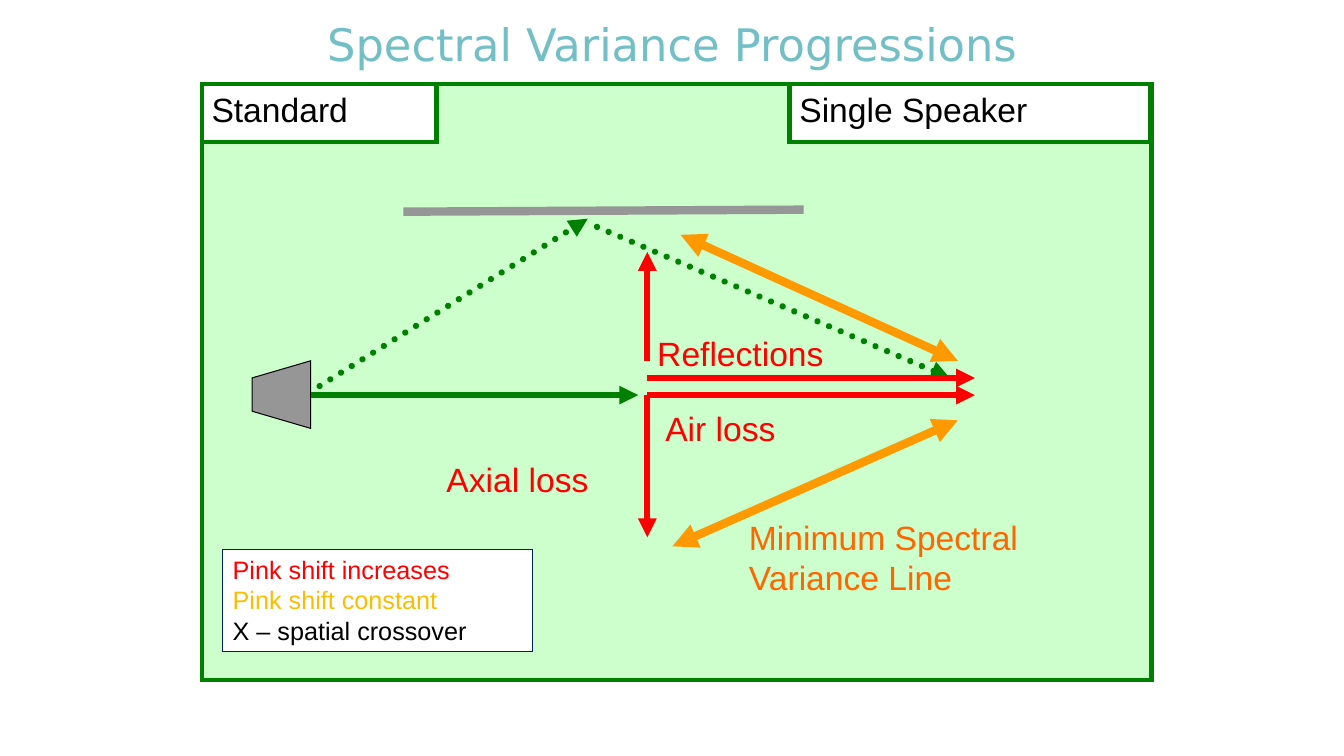
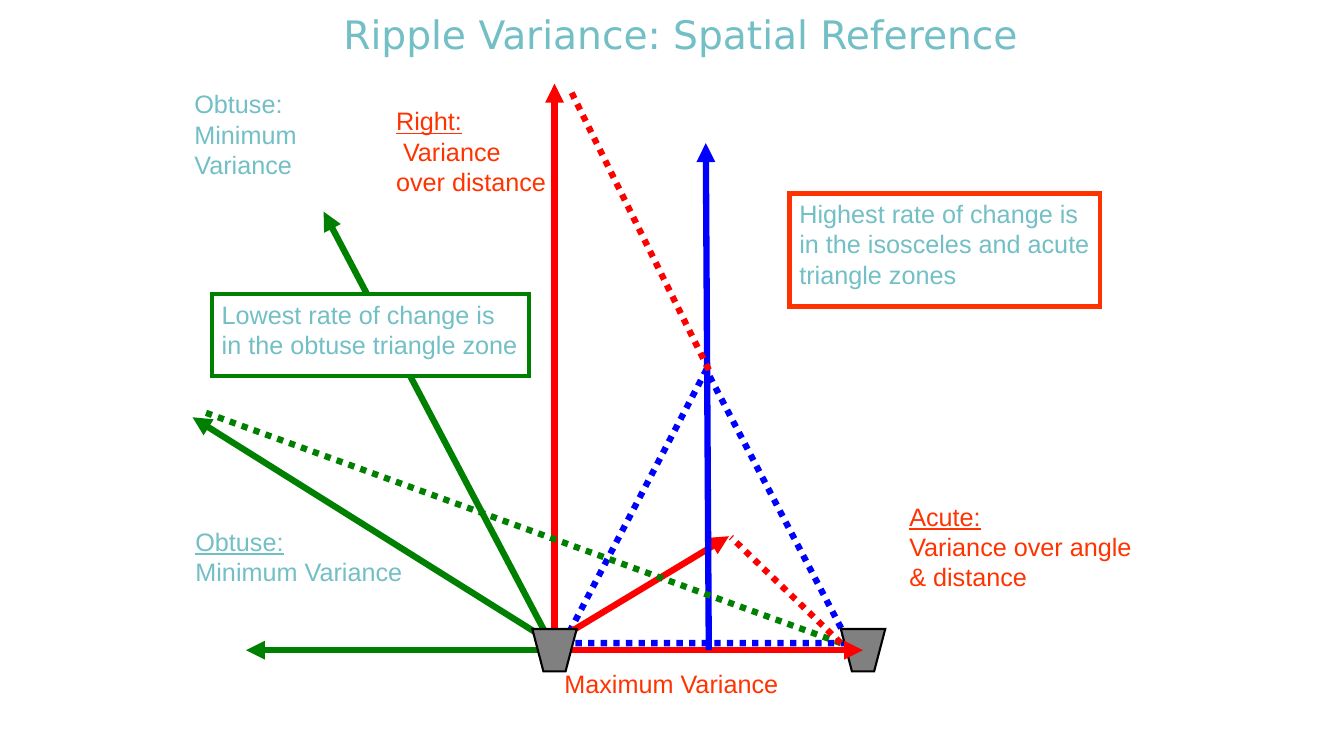
from dataclasses import dataclass
from functools import singledispatch
from typing import Any, Optional

from lxml.etree import SubElement
from pptx import Presentation
from pptx.dml.color import RGBColor as Rgb
from pptx.enum.shapes import MSO_CONNECTOR as Connector, MSO_SHAPE as Preset
from pptx.enum.text import MSO_ANCHOR as Anchor, PP_ALIGN as Align
from pptx.oxml.ns import qn
from pptx.util import Emu, Pt

PX = 9144  # EMU per px, 100 px to the inch


@dataclass(frozen=True)
class Theme:
    """Every colour, font and type size of the deck."""
    teal: str = "72BFC5"
    green: str = "008000"
    mint: str = "CCFFCC"
    red: str = "FF0000"
    vermilion: str = "FF3300"
    orange: str = "FF9900"
    deep_orange: str = "FF6600"
    amber: str = "FABE00"
    blue: str = "0000FF"
    navy: str = "002060"
    light_gray: str = "969696"
    gray: str = "808080"
    white: str = "FFFFFF"
    black: str = "000000"
    title_font: str = "DejaVu Sans"
    body_font: str = "Arial"
    label: int = 24
    note: int = 18
    frame: float = 3
    ray: float = 4.5
    bar: float = 6


T = Theme()


@dataclass(frozen=True)
class Line:
    """One paragraph of text."""
    text: str
    color: str
    underline: bool = False


@dataclass(frozen=True)
class Title:
    text: str
    left: int
    top: int
    size: int


@dataclass(frozen=True)
class Box:
    """Text, or a panel when it has a fill or a border."""
    left: int
    top: int
    width: int
    height: int
    lines: tuple[Line, ...] = ()
    size: int = T.note
    fill: Optional[str] = None
    border: Optional[str] = None
    weight: float = T.frame


@dataclass(frozen=True)
class Ray:
    """A straight line, with arrowheads at the named ends."""
    start: tuple[int, int]
    end: tuple[int, int]
    color: str
    ends: tuple[str, ...] = ("tailEnd",)
    weight: float = T.ray
    dotted: bool = False
    cap: str = "flat"


@dataclass(frozen=True)
class Speaker:
    corners: tuple[tuple[int, int], ...]
    fill: str
    weight: float


@dataclass(frozen=True)
class Triangle:
    left: int
    top: int
    width: int
    height: int
    color: str


def assign(target: Any, values: dict[str, Any]) -> None:
    for name, value in values.items():
        setattr(target, name, value)


def px(*lengths: int) -> list[Emu]:
    return [Emu(length * PX) for length in lengths]


def paint(shape: Any, color: Optional[str]) -> None:
    shape.shadow.inherit = False
    if color:
        shape.fill.solid()
        shape.fill.fore_color.rgb = Rgb.from_string(color)
    else:
        shape.fill.background()


def stroke(shape: Any, color: str, weight: float, dotted: bool = False,
           cap: str = "flat", ends: tuple[str, ...] = ()) -> None:
    shape.line.color.rgb = Rgb.from_string(color)
    shape.line.width = Pt(weight)
    ln = shape.element.spPr.find(qn("a:ln"))
    ln.set("cap", cap)
    if dotted:
        SubElement(ln, qn("a:prstDash"), val="sysDot")
    SubElement(ln, qn("a:miter"), lim="800000")
    for end in sorted(ends):
        SubElement(ln, qn(f"a:{end}"), type="triangle")


def write(shape: Any, lines: tuple[Line, ...], size: int, font: str = T.body_font,
          align: Align = Align.LEFT, anchor: Anchor = Anchor.TOP) -> None:
    frame = shape.text_frame
    assign(frame, {"word_wrap": True, "vertical_anchor": anchor})
    for index, line in enumerate(lines):
        paragraph = frame.add_paragraph() if index else frame.paragraphs[0]
        paragraph.alignment = align
        run = paragraph.add_run()
        run.text = line.text
        assign(run.font, {"name": font, "size": Pt(size), "underline": line.underline})
        run.font.color.rgb = Rgb.from_string(line.color)


@singledispatch
def draw(part: Any, shapes: Any) -> None:
    raise TypeError(f"cannot draw {part!r}")


@draw.register
def draw_title(part: Title, shapes: Any) -> None:
    heading = shapes.add_textbox(*px(part.left, part.top, 850, 67))
    write(heading, (Line(part.text, T.teal),), part.size, T.title_font,
          Align.CENTER, Anchor.MIDDLE)


@draw.register
def draw_box(part: Box, shapes: Any) -> None:
    area = px(part.left, part.top, part.width, part.height)
    if part.border:
        panel = shapes.add_shape(Preset.RECTANGLE, *area)
        paint(panel, part.fill)
        stroke(panel, part.border, part.weight)
    else:
        panel = shapes.add_textbox(*area)
    write(panel, part.lines, part.size)


@draw.register
def draw_ray(part: Ray, shapes: Any) -> None:
    ray = shapes.add_connector(Connector.STRAIGHT, *px(*part.start, *part.end))
    stroke(ray, part.color, part.weight, part.dotted, part.cap, part.ends)
    SubElement(ray.element.spPr, qn("a:effectLst"))


@draw.register
def draw_speaker(part: Speaker, shapes: Any) -> None:
    first, *rest = part.corners
    outline = shapes.build_freeform(*first, scale=PX)
    outline.add_line_segments(rest, close=True)
    cabinet = outline.convert_to_shape()
    paint(cabinet, part.fill)
    stroke(cabinet, T.black, part.weight)


@draw.register
def draw_triangle(part: Triangle, shapes: Any) -> None:
    area = px(part.left, part.top, part.width, part.height)
    triangle = shapes.add_shape(Preset.ISOSCELES_TRIANGLE, *area)
    paint(triangle, None)
    stroke(triangle, part.color, T.ray, dotted=True)


def label(left: int, top: int, width: int, height: int, text: str, color: str) -> Box:
    return Box(left, top, width, height, (Line(text, color),), T.label)


def tab(left: int, width: int, text: str) -> Box:
    return Box(left, 83, width, 58, (Line(text, T.black),), T.label, T.white, T.green)


def callout(left: int, top: int, width: int, height: int, text: str, border: str) -> Box:
    return Box(left, top, width, height, (Line(text, T.teal),), fill=T.white, border=border)


def zone(left: int, top: int, width: int, height: int, name: str, text: str,
         color: str, underline: bool = True) -> Box:
    return Box(left, top, width, height, (Line(name, color, underline), Line(text, color)))


def upright_speaker(center: int) -> Speaker:
    corners = ((center - 22, 624), (center - 11, 666), (center + 11, 666), (center + 22, 624))
    return Speaker(corners, T.gray, 1.5)


HEAD = ("headEnd",)
BOTH = ("headEnd", "tailEnd")

SPECTRAL = (
    # Panel, title and reflecting surface
    Box(200, 83, 942, 592, fill=T.mint, border=T.green),
    Title("Spectral Variance Progressions", 242, 10, 32),
    Ray((400, 210), (797, 208), T.light_gray, (), T.bar),
    tab(783, 358, "Single Speaker"),
    # Speaker and sound paths
    Speaker(((308, 425), (250, 408), (250, 375), (308, 358)), T.light_gray, 0.75),
    label(650, 400, 245, 38, "Air loss", T.red),
    Ray((308, 392), (633, 392), T.green),
    Ray((317, 383), (583, 217), T.green, dotted=True, cap="rnd"),
    Ray((942, 375), (592, 225), T.green, HEAD, dotted=True, cap="rnd"),
    Ray((967, 392), (642, 392), T.red, HEAD),
    tab(200, 233, "Standard"),
    # Losses and variance lines
    label(642, 325, 229, 38, "Reflections", T.red),
    label(433, 450, 242, 38, "Axial loss", T.red),
    Ray((642, 533), (642, 392), T.red, HEAD),
    Ray((950, 417), (667, 542), T.orange, BOTH, T.bar),
    label(733, 508, 325, 62, "Minimum Spectral Variance Line", T.deep_orange),
    Ray((967, 375), (642, 375), T.red, HEAD),
    Ray((642, 250), (642, 358), T.red, HEAD),
    Ray((950, 358), (675, 233), T.orange, BOTH, T.bar),
    # Key
    Box(221, 545, 307, 101, (
        Line("Pink shift increases", T.red),
        Line("Pink shift constant", T.amber),
        Line("X – spatial crossover", T.black),
    ), fill=T.white, border=T.navy, weight=0.75),
)

RIPPLE = (
    Title("Ripple Variance: Spatial Reference", 250, 0, 28),
    # Isosceles triangle and arrows from the left speaker
    Triangle(559, 367, 283, 271, T.blue),
    Ray((550, 638), (550, 83), T.red),
    Ray((545, 636), (191, 414), T.green),
    Ray((550, 645), (244, 645), T.green),
    Ray((550, 645), (321, 210), T.green),
    Ray((544, 640), (723, 532), T.red),
    upright_speaker(856),
    Ray((550, 645), (856, 645), T.red),
    # Zone names
    Box(550, 658, 306, 42, (Line("Maximum Variance", T.vermilion),)),
    zone(892, 492, 249, 125, "Acute:", "Variance over angle & distance", T.vermilion),
    Ray((703, 645), (700, 142), T.blue),
    zone(383, 100, 175, 142, "Right:", " Variance over distance", T.vermilion),
    zone(183, 83, 183, 108, "Obtuse:", "Minimum Variance", T.teal, False),
    # Paths from the right speaker
    Ray((834, 638), (200, 408), T.green, (), dotted=True),
    Ray((703, 367), (567, 92), T.red, (), dotted=True),
    Ray((834, 638), (725, 533), T.red, (), dotted=True),
    upright_speaker(550),
    # Rates of change
    callout(783, 192, 308, 112,
            "Highest rate of change is in the isosceles and acute triangle zones", T.vermilion),
    callout(210, 292, 315, 81,
            "Lowest rate of change is in the obtuse triangle zone", T.green),
    zone(184, 517, 233, 108, "Obtuse:", "Minimum Variance", T.teal),
)


def main() -> None:
    deck = Presentation()
    width, height = px(1333, 750)
    assign(deck, {"slide_width": width, "slide_height": height})
    for parts in (SPECTRAL, RIPPLE):
        slide = deck.slides.add_slide(deck.slide_layouts[6])
        for part in parts:
            draw(part, slide.shapes)
    deck.save("out.pptx")


if __name__ == "__main__":
    main()
